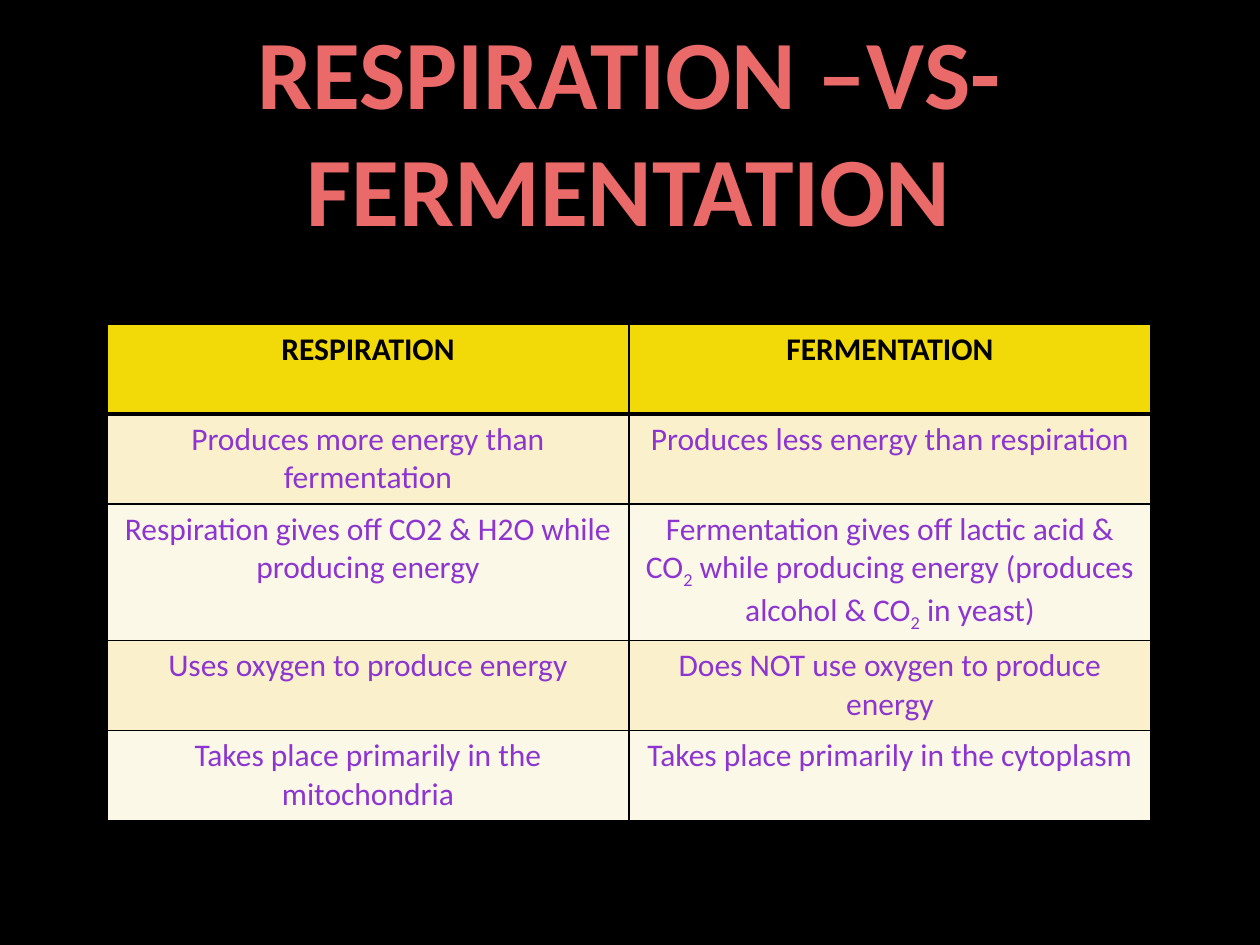
import lxml.etree
import pptx
import pptx.dml.color
import pptx.enum.text
import pptx.oxml.ns
import pptx.util

PX = 914400 / 126
FONT = "Calibri"
BLACK, CORAL, PURPLE = "000000", "EA6969", "8D35D1"
HEADER_FILL, BAND_FILLS = "F2D908", ("FAF1CC", "FCF8E7")

# Text between bars is subscript
ROWS = [
    ("RESPIRATION", "FERMENTATION"),
    ("Produces more energy than fermentation",
     "Produces less energy than respiration"),
    ("Respiration gives off CO2 & H2O while producing energy",
     "Fermentation gives off lactic acid & CO|2| while producing energy "
     "(produces alcohol & CO|2| in yeast)"),
    ("Uses oxygen to produce energy",
     "Does NOT use oxygen to produce energy"),
    ("Takes place primarily in the mitochondria",
     "Takes place primarily in the cytoplasm"),
]
ROW_HEIGHTS = (90, 90, 136, 90, 90)
COL_WIDTH = 522


def px(n):
    return pptx.util.Emu(round(n * PX))


def rgb(value):
    return pptx.dml.color.RGBColor.from_string(value)


def set_fill(fill, color):
    fill.solid()
    fill.fore_color.rgb = rgb(color)


def write(p, text, size, color, bold=False):
    p.alignment = pptx.enum.text.PP_ALIGN.CENTER
    for i, part in enumerate(text.split("|")):
        r = p.add_run()
        r.text = part
        r.font.name = FONT
        r.font.size = pptx.util.Pt(size)
        r.font.bold = bold
        r.font.color.rgb = rgb(color)
        if i % 2:
            r.font._element.set("baseline", "-25000")


def set_borders(cell, bottom):
    tcPr = cell._tc.get_or_add_tcPr()
    widths = {"a:lnL": 1, "a:lnR": 1, "a:lnT": 1, "a:lnB": bottom}
    # Border lines come before the fill in the cell properties
    for i, (tag, width) in enumerate(widths.items()):
        ln = lxml.etree.Element(pptx.oxml.ns.qn(tag), w=str(pptx.util.Pt(width)))
        fill = lxml.etree.SubElement(ln, pptx.oxml.ns.qn("a:solidFill"))
        lxml.etree.SubElement(fill, pptx.oxml.ns.qn("a:srgbClr"), val=BLACK)
        tcPr.insert(i, ln)


def add_title(s, text):
    sp = s.shapes.title
    sp.left, sp.top, sp.width, sp.height = px(107), px(15), px(1044), px(228)
    tf = sp.text_frame
    tf.word_wrap = True
    tf.auto_size = pptx.enum.text.MSO_AUTO_SIZE.NONE
    tf.vertical_anchor = pptx.enum.text.MSO_ANCHOR.MIDDLE
    write(tf.paragraphs[0], text, 56, CORAL, bold=True)


def add_comparison(s):
    table = s.shapes.add_table(len(ROWS), 2, px(107), px(324),
                               px(2 * COL_WIDTH), px(sum(ROW_HEIGHTS))).table
    for col in table.columns:
        col.width = px(COL_WIDTH)
    for i, (texts, height) in enumerate(zip(ROWS, ROW_HEIGHTS)):
        header = i == 0
        table.rows[i].height = px(height)
        for j, text in enumerate(texts):
            cell = table.cell(i, j)
            set_fill(cell.fill, HEADER_FILL if header else BAND_FILLS[(i - 1) % 2])
            set_borders(cell, bottom=3 if header else 1)
            write(cell.text_frame.paragraphs[0], text, 18,
                  BLACK if header else PURPLE, bold=header)


def main():
    prs = pptx.Presentation()
    prs.slide_width, prs.slide_height = px(1260), px(945)
    s = prs.slides.add_slide(prs.slide_layouts[5])
    set_fill(s.background.fill, BLACK)
    add_title(s, "RESPIRATION –VS-FERMENTATION")
    add_comparison(s)
    prs.save("out.pptx")


if __name__ == "__main__":
    main()
